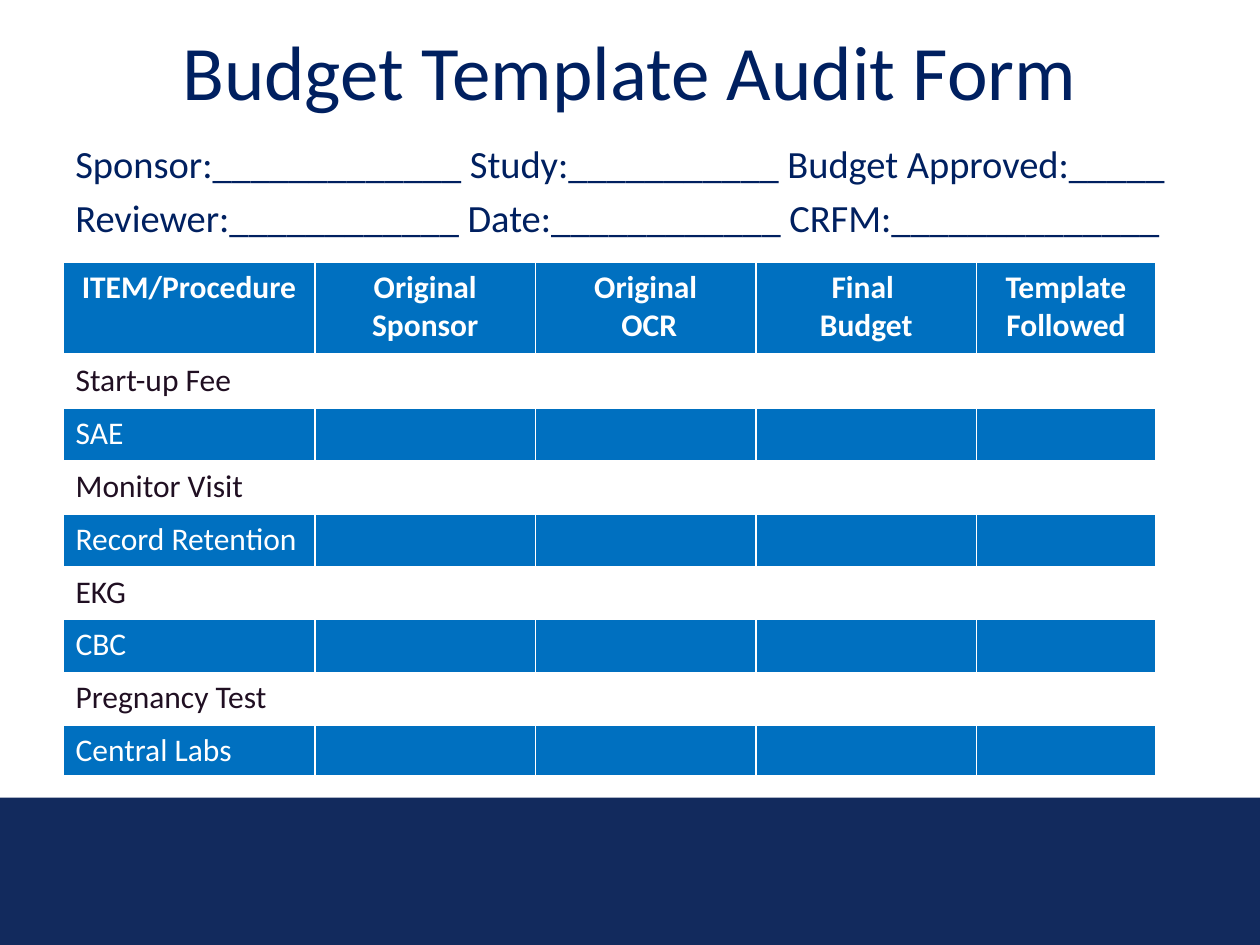
import lxml.etree
import pptx
import pptx.dml.color
import pptx.enum.shapes
import pptx.enum.text
import pptx.oxml.ns
import pptx.util
from pptx.util import Inches

NAVY = "002060"
BLUE = "0070C0"
WHITE = "FFFFFF"
DARK = "200F22"
CENTER = pptx.enum.text.PP_ALIGN.CENTER
LEFT = pptx.enum.text.PP_ALIGN.LEFT

FORM_LINES = [
    "Sponsor:_____________ Study:___________ Budget Approved:_____",
    "Reviewer:____________ Date:____________ CRFM:______________",
]
HEADERS = [
    ["ITEM/Procedure"],
    ["Original Sponsor"],
    ["Original", " OCR"],
    ["Final ", "Budget"],
    ["Template Followed"],
]
ITEMS = [
    "Start-up Fee", "SAE", "Monitor Visit", "Record Retention",
    "EKG", "CBC", "Pregnancy Test", "Central Labs",
]
COLUMN_WIDTHS = [2, 1.75, 1.75, 1.75, 1.42]
ROW_HEIGHTS = [0.74] + [0.42] * 7 + [0.4]


def rgb(color):
    return pptx.dml.color.RGBColor.from_string(color)


def write_lines(frame, lines, size, color, align=LEFT, bold=False, gap=0):
    for index, line in enumerate(lines):
        paragraph = frame.add_paragraph() if index else frame.paragraphs[0]
        paragraph.text = line
        paragraph.alignment = align
        if index and gap:
            paragraph.space_before = pptx.util.Pt(gap)
        paragraph.font.name = "Calibri"
        paragraph.font.size = pptx.util.Pt(size)
        paragraph.font.bold = bold
        paragraph.font.color.rgb = rgb(color)


def add_text(slide, top, height, lines, size, anchor, **style):
    box = slide.shapes.add_textbox(Inches(0.5), Inches(top), Inches(9), Inches(height))
    box.text_frame.word_wrap = True
    box.text_frame.vertical_anchor = anchor
    write_lines(box.text_frame, lines, size, NAVY, **style)


def add_footer_band(slide):
    band = slide.shapes.add_shape(
        pptx.enum.shapes.MSO_SHAPE.RECTANGLE,
        Inches(0), Inches(6.33), Inches(10), Inches(1.17))
    band.shadow.inherit = False
    band.fill.solid()
    band.fill.fore_color.rgb = rgb("122A5D")
    band.line.fill.background()


def set_borders(cell, bottom_width):
    properties = cell._tc.get_or_add_tcPr()
    widths = {"a:lnL": 1, "a:lnR": 1, "a:lnT": 1, "a:lnB": bottom_width}
    for position, (tag, width) in enumerate(widths.items()):
        line = lxml.etree.Element(pptx.oxml.ns.qn(tag), w=str(pptx.util.Pt(width)))
        fill = lxml.etree.SubElement(line, pptx.oxml.ns.qn("a:solidFill"))
        lxml.etree.SubElement(fill, pptx.oxml.ns.qn("a:srgbClr"), val=WHITE)
        properties.insert(position, line)


def add_audit_table(slide):
    table = slide.shapes.add_table(
        len(ROW_HEIGHTS), len(COLUMN_WIDTHS), Inches(0.5), Inches(2.08),
        Inches(sum(COLUMN_WIDTHS)), Inches(sum(ROW_HEIGHTS))).table
    for column, width in zip(table.columns, COLUMN_WIDTHS):
        column.width = Inches(width)
    for row_index, (row, height) in enumerate(zip(table.rows, ROW_HEIGHTS)):
        row.height = Inches(height)
        for cell in row.cells:
            cell.fill.solid()
            cell.fill.fore_color.rgb = rgb(WHITE if row_index % 2 else BLUE)
            set_borders(cell, 1 if row_index else 3)
    for column_index, lines in enumerate(HEADERS):
        write_lines(table.cell(0, column_index).text_frame, lines, 18, WHITE,
                    align=CENTER, bold=True)
    for row_index, item in enumerate(ITEMS, start=1):
        write_lines(table.cell(row_index, 0).text_frame, [item], 18,
                    DARK if row_index % 2 else WHITE)


def main():
    presentation = pptx.Presentation()
    presentation.slide_width = Inches(10)
    presentation.slide_height = Inches(7.5)
    slide = presentation.slides.add_slide(presentation.slide_layouts[6])
    add_footer_band(slide)
    add_text(slide, 0.15, 0.81, ["Budget Template Audit Form"], 44,
             pptx.enum.text.MSO_ANCHOR.MIDDLE, align=CENTER)
    add_text(slide, 1.06, 4.91, FORM_LINES, 22,
             pptx.enum.text.MSO_ANCHOR.TOP, gap=4.4)
    add_audit_table(slide)
    presentation.save("out.pptx")


if __name__ == "__main__":
    main()
